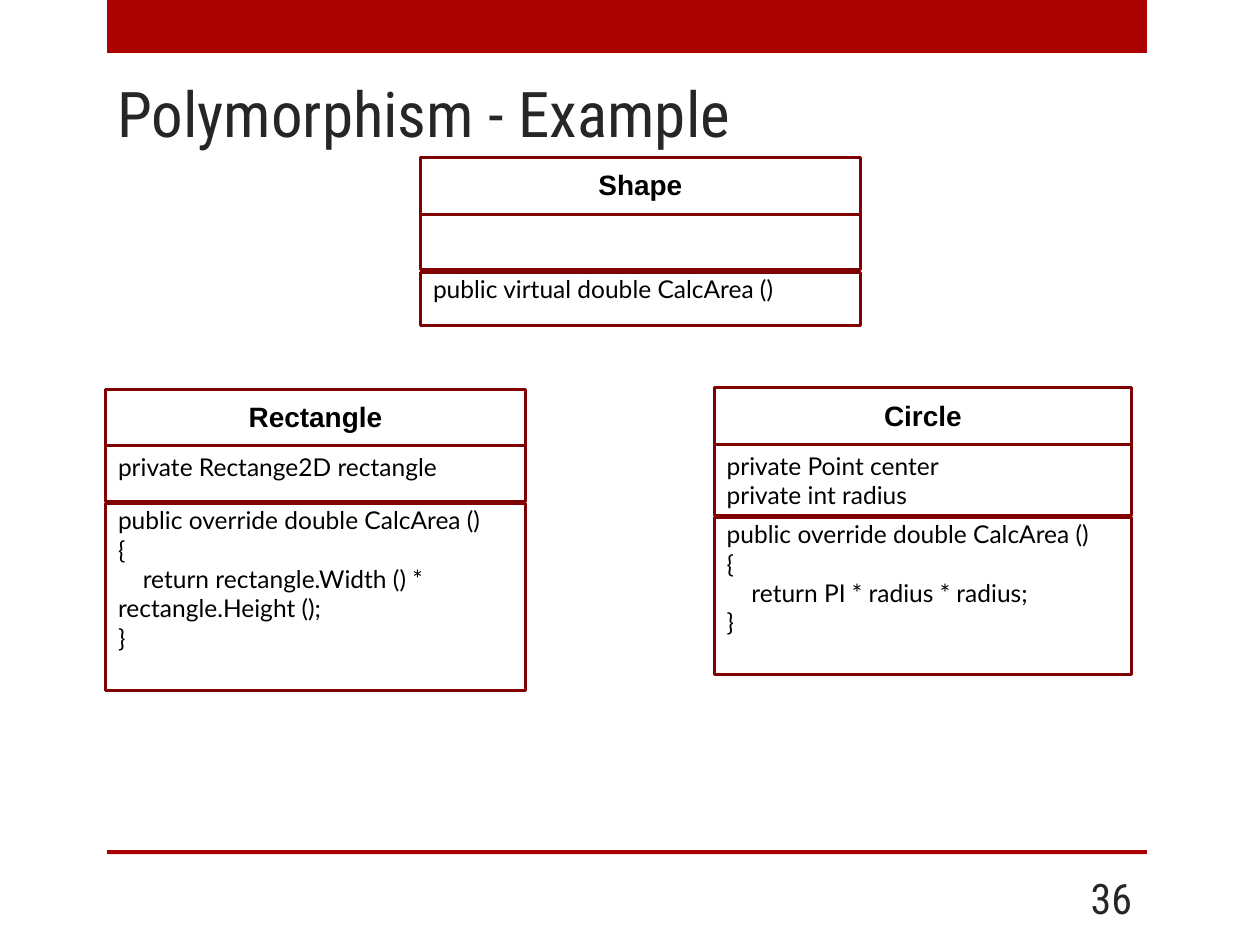
from dataclasses import dataclass

from pptx import Presentation
from pptx import util as u
from pptx.dml.color import RGBColor
from pptx.enum import shapes, text


@dataclass(frozen=True)
class Theme:
    bar = RGBColor(0xAD, 0x01, 0x01)
    outline = RGBColor(0x80, 0x01, 0x01)
    heading = RGBColor(0x26, 0x26, 0x26)
    body = RGBColor(0x00, 0x00, 0x00)
    heading_font = "Roboto Condensed"
    name_font = "Arial"
    code_font = "Lato"
    title_size = u.Pt(36)
    number_size = u.Pt(24)
    name_size = u.Pt(16)
    code_size = u.Pt(14)
    line_width = u.Pt(1.75)


theme = Theme()
NAME_HEIGHT = 1.14
METHODS_GAP = 0.05
CODE_INDENT = u.Cm(0.5)


def add_rectangle(left, top, width, height):
    shape = slide.shapes.add_shape(
        shapes.MSO_SHAPE.RECTANGLE, u.Cm(left), u.Cm(top), u.Cm(width), u.Cm(height))
    shape.shadow.inherit = False
    return shape


def write_lines(shape, lines, font, size, color, align=text.PP_ALIGN.LEFT, bold=False):
    """Fill the shape with one paragraph per line; a leading tab indents the first line."""
    frame = shape.text_frame
    frame.word_wrap = True
    for index, line in enumerate(lines):
        paragraph = frame.add_paragraph() if index else frame.paragraphs[0]
        paragraph.alignment = align
        if line.startswith("\t"):
            paragraph._p.get_or_add_pPr().set("indent", str(CODE_INDENT))
        run = paragraph.add_run()
        run.text = line.lstrip("\t")
        run.font.name = font
        run.font.size = size
        run.font.bold = bold
        run.font.color.rgb = color


presentation = Presentation()
presentation.slide_width = u.Cm(25.4)
presentation.slide_height = u.Cm(19.05)
slide = presentation.slides.add_slide(presentation.slide_layouts[5])

# Bars at the head and foot
for top, height in ((0, 1.07), (17.14, 0.08)):
    bar = add_rectangle(2.16, top, 20.96, height)
    bar.fill.solid()
    bar.fill.fore_color.rgb = theme.bar
    bar.line.fill.background()

title = slide.shapes.title
title.left, title.top, title.width, title.height = (
    u.Cm(2.11), u.Cm(1.35), u.Cm(20.96), u.Cm(1.83))
title.text_frame.vertical_anchor = text.MSO_ANCHOR.MIDDLE
write_lines(title, ["Polymorphism - Example"],
            theme.heading_font, theme.title_size, theme.heading)

number = slide.shapes.add_textbox(u.Cm(20.96), u.Cm(17.58), u.Cm(2.11), u.Cm(1.02))
number.text_frame.vertical_anchor = text.MSO_ANCHOR.MIDDLE
write_lines(number, ["36"], theme.heading_font, theme.number_size, theme.heading,
            text.PP_ALIGN.RIGHT)

# Class boxes: left, top, width, attributes height, methods height, then the text
classes = [
    (8.48, 3.18, 8.86, 1.12, 1.07, "Shape", [], ["public virtual double CalcArea ()"]),
    (2.13, 7.85, 8.46, 1.12, 3.76, "Rectangle",
     ["private Rectange2D rectangle"],
     ["public override double CalcArea ()", "{",
      "\treturn rectangle.Width () * rectangle.Height ();", "}"]),
    (14.4, 7.82, 8.41, 1.43, 3.15, "Circle",
     ["private Point center", "private int radius"],
     ["public override double CalcArea ()", "{",
      "\treturn PI * radius * radius;", "}"]),
]

name_style = (theme.name_font, theme.name_size, theme.body, text.PP_ALIGN.CENTER, True)
code_style = (theme.code_font, theme.code_size, theme.body)

for left, top, width, attributes_height, methods_height, name, attributes, methods in classes:
    attributes_top = top + NAME_HEIGHT
    methods_top = attributes_top + attributes_height + METHODS_GAP
    # Each compartment: top, height, text offset, lines, style
    compartments = [
        (top, NAME_HEIGHT, 0.08, [name], name_style),
        (attributes_top, attributes_height, 0, attributes, code_style),
        (methods_top, methods_height, -0.1, methods, code_style),
    ]
    for box_top, box_height, offset, lines, style in compartments:
        box = add_rectangle(left, box_top, width, box_height)
        box.fill.background()
        box.line.color.rgb = theme.outline
        box.line.width = theme.line_width
        if lines:
            label = slide.shapes.add_textbox(
                u.Cm(left), u.Cm(box_top + offset), u.Cm(width),
                u.Cm(0.27 + 0.59 * len(lines)))
            label.text_frame.auto_size = text.MSO_AUTO_SIZE.SHAPE_TO_FIT_TEXT
            write_lines(label, lines, *style)

presentation.save("out.pptx")
